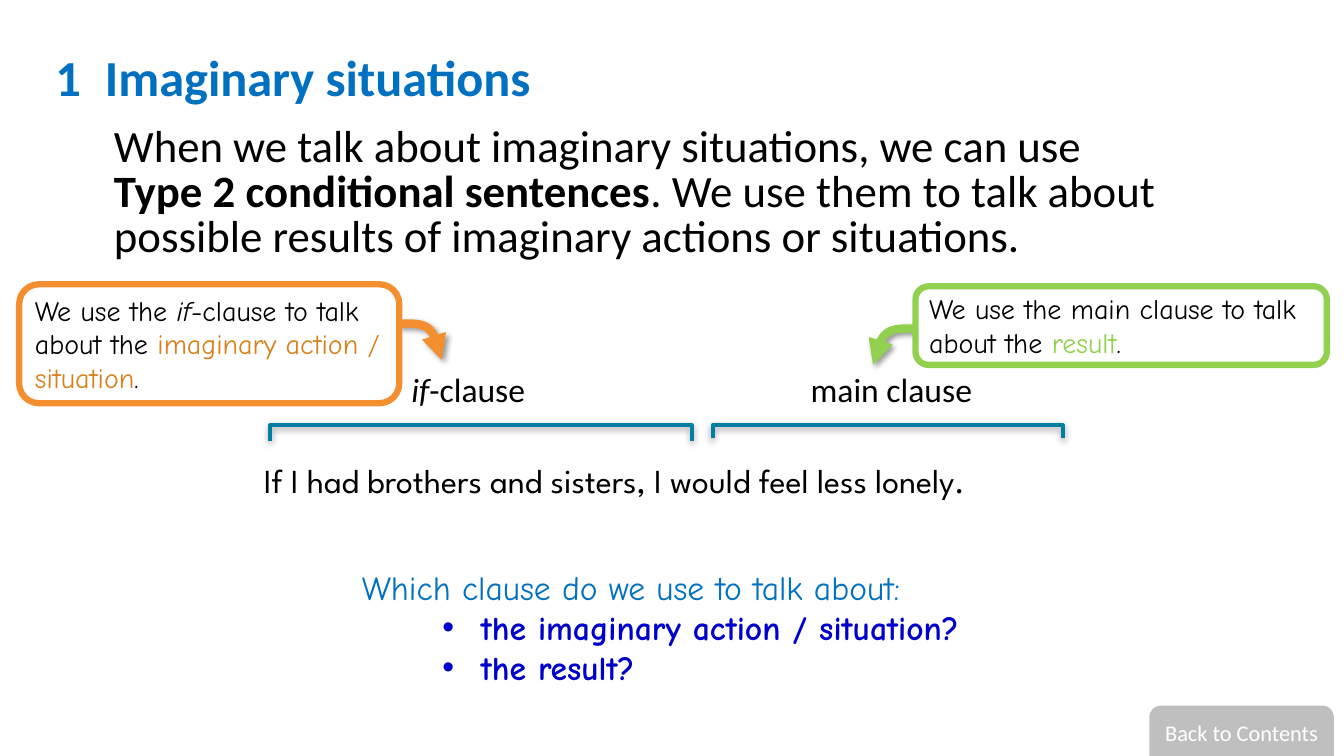
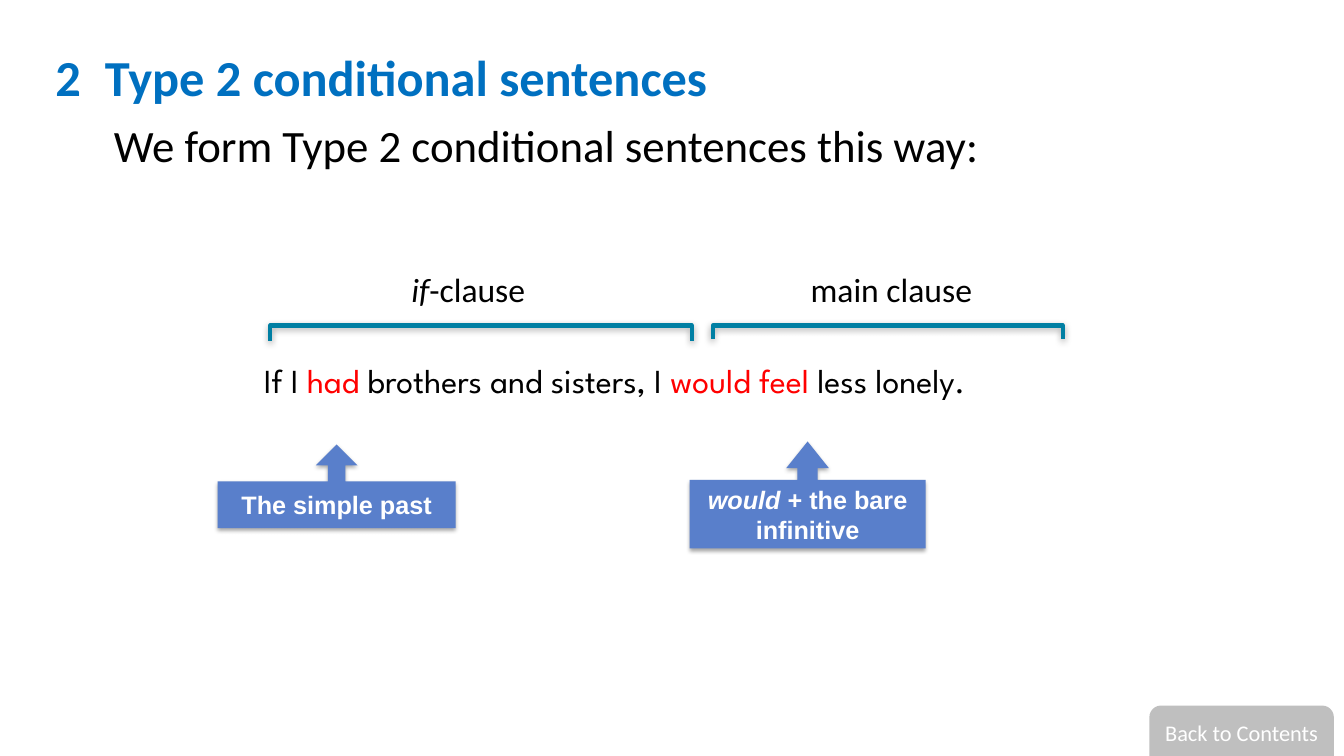
from lxml.etree import SubElement
from pptx import Presentation
from pptx.dml.color import RGBColor
from pptx.enum.shapes import MSO_SHAPE
from pptx.enum.text import MSO_ANCHOR, MSO_AUTO_SIZE, PP_ALIGN
from pptx.oxml.ns import qn
from pptx.util import Inches, Pt

BLACK = RGBColor(0x00, 0x00, 0x00)
WHITE = RGBColor(0xFF, 0xFF, 0xFF)
TITLE_BLUE = RGBColor(0x00, 0x70, 0xC0)
DEEP_BLUE = RGBColor(0x00, 0x00, 0xCC)
BOX_BLUE = RGBColor(0x59, 0x7F, 0xCB)
TEAL = RGBColor(0x00, 0x7F, 0xA3)
GREEN = RGBColor(0x92, 0xD0, 0x50)
ORANGE = RGBColor(0xF3, 0x8F, 0x2F)
DARK_ORANGE = RGBColor(0xD7, 0x80, 0x1C)
RED = RGBColor(0xFF, 0x00, 0x00)
GRAY = RGBColor(0xBF, 0xBF, 0xBF)

MAIN_FONT = "Calibri"
NOTE_FONT = "Comic Neue"
EXAMPLE_FONT = "League Spartan"
LABEL_FONT = "Arial"

CURVES = (
    ((0, 0), (0.11, 0), (0.23, -0.01), (0.3, 0.05)),
    ((0.3, 0.05), (0.37, 0.11), (0.4, 0.23), (0.43, 0.36)),
)
CURVE_STEPS = 12


def write_runs(paragraph, runs, font_name, size, color=BLACK, bold=False):
    for text, style in runs:
        if text == "\n":
            paragraph.add_line_break()
            continue
        run = paragraph.add_run()
        run.text = text
        run.font.name = font_name
        run.font.size = Pt(size)
        run.font.bold = style.get("bold", bold)
        run.font.italic = style.get("italic", False)
        run.font.color.rgb = style.get("color", color)


def set_indent(paragraph, left, first, bullet=None):
    properties = paragraph._p.get_or_add_pPr()
    properties.set("marL", str(Inches(left)))
    properties.set("indent", str(Inches(first)))
    if bullet:
        SubElement(properties, qn("a:buFont"), typeface="Arial")
        SubElement(properties, qn("a:buChar"), char=bullet)
    else:
        SubElement(properties, qn("a:buNone"))


def set_insets(text_frame, horizontal, vertical):
    text_frame.margin_left = text_frame.margin_right = Inches(horizontal)
    text_frame.margin_top = text_frame.margin_bottom = Inches(vertical)


def set_shadow(shape, alpha, blur, distance, direction):
    shape.shadow.inherit = False
    effects = shape._element.spPr.find(qn("a:effectLst"))
    shadow = SubElement(effects, qn("a:outerShdw"), blurRad=str(Pt(blur)),
                        dist=str(Pt(distance)), dir=str(direction * 60000),
                        rotWithShape="0")
    color = SubElement(shadow, qn("a:srgbClr"), val=str(BLACK))
    SubElement(color, qn("a:alpha"), val=str(alpha * 1000))


def place(shape, left, top, width, height):
    shape.left, shape.top = Inches(left), Inches(top)
    shape.width, shape.height = Inches(width), Inches(height)


def add_box(slide, kind, left, top, width, height, fill=None, line=None, line_width=1):
    shape = slide.shapes.add_shape(kind, Inches(left), Inches(top),
                                   Inches(width), Inches(height))
    shape.shadow.inherit = False
    if fill is None:
        shape.fill.background()
    else:
        shape.fill.solid()
        shape.fill.fore_color.rgb = fill
    if line is None:
        shape.line.fill.background()
    else:
        shape.line.color.rgb = line
        shape.line.width = Pt(line_width)
    shape.text_frame.word_wrap = True
    shape.text_frame.vertical_anchor = MSO_ANCHOR.MIDDLE
    return shape


def add_text(slide, left, top, width, height, runs, font_name, size, inset=True):
    shape = slide.shapes.add_textbox(Inches(left), Inches(top),
                                     Inches(width), Inches(height))
    text_frame = shape.text_frame
    text_frame.word_wrap = True
    if not inset:
        set_insets(text_frame, 0, 0)
    write_runs(text_frame.paragraphs[0], runs, font_name, size)
    return text_frame


def fill_placeholder(shape, box, runs, size, spacing, indent, color=BLACK, bold=False):
    place(shape, *box)
    text_frame = shape.text_frame
    text_frame.word_wrap = True
    text_frame.auto_size = MSO_AUTO_SIZE.NONE
    text_frame.vertical_anchor = MSO_ANCHOR.TOP
    paragraph = text_frame.paragraphs[0]
    set_indent(paragraph, indent, -indent)
    paragraph.alignment = PP_ALIGN.LEFT
    paragraph.line_spacing = Pt(spacing)
    paragraph.space_before = Pt(0)
    write_runs(paragraph, runs, MAIN_FONT, size, color, bold)


def add_lesson_slide(presentation, title, introduction):
    slide = presentation.slides.add_slide(presentation.slide_layouts[1])
    heading, body = slide.placeholders
    fill_placeholder(heading, (0.55, 0.5, 11.77, 0.63), [(title, {})],
                     36, 40, 0.49, TITLE_BLUE, True)
    set_insets(heading.text_frame, 0, 0)
    fill_placeholder(body, (1.03, 1.21, 11.21, 1.45), introduction, 32, 32, 0)

    tab = add_box(slide, MSO_SHAPE.ROUND_2_SAME_RECTANGLE, 11.4, 7, 1.83, 0.5, GRAY)
    tab.adjustments[0] = 0.23
    set_insets(tab.text_frame, 0.1, 0)
    paragraph = tab.text_frame.paragraphs[0]
    paragraph.alignment = PP_ALIGN.CENTER
    write_runs(paragraph, [("Back to Contents", {})], MAIN_FONT, 16, WHITE)
    return slide


def add_bracket(slide, left, top, width, depth):
    bracket = add_box(slide, MSO_SHAPE.LEFT_BRACKET, left + (width - depth) / 2,
                      top + (depth - width) / 2, depth, width, line=TEAL, line_width=3)
    bracket.rotation = 90
    bracket.adjustments[0] = 0
    set_shadow(bracket, 35, 5, 1.8, 90)


def add_clause_diagram(slide, top, sentence):
    text_frame = add_text(slide, 2.52, top + 0.81, 10.1, 0.54, sentence, EXAMPLE_FONT, 24)
    text_frame.paragraphs[0].line_spacing = Pt(32)
    add_text(slide, 4.08, top, 1.78, 0.42, [("if", {"italic": True}), ("-clause", {})],
             MAIN_FONT, 24, inset=False)
    add_text(slide, 8.04, top, 1.64, 0.42, [("main clause", {})],
             MAIN_FONT, 24, inset=False)
    add_bracket(slide, 2.68, top + 0.56, 4.18, 0.15)
    add_bracket(slide, 7.07, top + 0.56, 3.47, 0.13)


def curve_point(curve, t):
    weights = ((1 - t) ** 3, 3 * t * (1 - t) ** 2, 3 * t ** 2 * (1 - t), t ** 3)
    return tuple(sum(w * point[axis] for w, point in zip(weights, curve))
                 for axis in (0, 1))


def add_curved_arrow(slide, left, top, direction, color):
    offsets = [curve_point(curve, step / CURVE_STEPS)
               for curve in CURVES for step in range(1, CURVE_STEPS + 1)]
    points = [(Inches(left + direction * x), Inches(top + y)) for x, y in offsets]
    builder = slide.shapes.build_freeform(Inches(left), Inches(top))
    builder.add_line_segments(points, close=False)
    arrow = builder.convert_to_shape()
    arrow.fill.background()
    arrow.line.color.rgb = color
    arrow.line.width = Pt(6)
    SubElement(arrow.line._get_or_add_ln(), qn("a:tailEnd"), type="triangle")
    set_shadow(arrow, 40, 4, 3, 45)


def add_note(slide, left, top, width, height, color, runs):
    note = add_box(slide, MSO_SHAPE.ROUNDED_RECTANGLE, left, top, width, height,
                   WHITE, color, 4.5)
    paragraph = note.text_frame.paragraphs[0]
    paragraph.alignment = PP_ALIGN.LEFT
    write_runs(paragraph, runs, NOTE_FONT, 20)


def add_question(slide, question, choices):
    text_frame = add_text(slide, 3.49, 5.57, 7.11, 1.31, [], NOTE_FONT, 24)
    write_runs(text_frame.paragraphs[0], [(question, {})], NOTE_FONT, 24, TITLE_BLUE)
    for choice in choices:
        paragraph = text_frame.add_paragraph()
        set_indent(paragraph, 1.18, -0.38, "•")
        write_runs(paragraph, [(choice, {})], NOTE_FONT, 24, DEEP_BLUE, True)


def add_form_callout(slide, left, top, width, height, adjustments, runs):
    callout = add_box(slide, MSO_SHAPE.UP_ARROW_CALLOUT, left, top, width, height, BOX_BLUE)
    for index, value in enumerate(adjustments):
        callout.adjustments[index] = value
    set_shadow(callout, 35, 3.1, 1.8, 90)
    set_insets(callout.text_frame, 0.1, 0)
    paragraph = callout.text_frame.paragraphs[0]
    paragraph.alignment = PP_ALIGN.CENTER
    write_runs(paragraph, runs, LABEL_FONT, 18, WHITE, True)


def build_situations_slide(presentation):
    slide = add_lesson_slide(presentation, "1\tImaginary situations", [
        ("When we talk about imaginary situations, we can use ", {}),
        ("\n", {}),
        ("Type 2 conditional sentences", {"bold": True}),
        (". We use them to talk about possible results of imaginary actions or situations.", {}),
    ])
    add_clause_diagram(slide, 3.66, [
        ("If I had brothers and sisters, I would feel less lonely.", {})])
    add_curved_arrow(slide, 9.09, 3.26, -1, GREEN)
    add_note(slide, 9.08, 2.84, 4.08, 0.78, GREEN, [
        ("We use the main clause to talk about the ", {}),
        ("result", {"color": GREEN}),
        (".", {}),
    ])
    add_question(slide, "Which clause do we use to talk about:",
                 ["the imaginary action / situation?", "the result?"])
    add_curved_arrow(slide, 3.95, 3.21, 1, ORANGE)
    add_note(slide, 0.19, 2.82, 3.77, 1.18, ORANGE, [
        ("We use the ", {}),
        ("if", {"italic": True}),
        ("-clause to talk about the ", {}),
        ("imaginary action / situation", {"color": DARK_ORANGE}),
        (".", {}),
    ])


def build_form_slide(presentation):
    slide = add_lesson_slide(presentation, "2\tType 2 conditional sentences", [
        ("We form Type 2 conditional sentences this way:", {})])
    add_clause_diagram(slide, 2.67, [
        ("If I ", {}),
        ("had", {"color": RED}),
        (" brothers and sisters, I ", {}),
        ("would feel ", {"color": RED}),
        ("less lonely.", {}),
    ])
    add_form_callout(slide, 2.16, 4.41, 2.36, 0.83, (0.21, 0.25, 0.25, 0.56),
                     [("The simple past", {})])
    add_form_callout(slide, 6.84, 4.38, 2.34, 1.06, (0.19, 0.2, 0.25, 0.64),
                     [("would ", {"italic": True}), ("+ the bare infinitive", {})])


def main():
    presentation = Presentation()
    presentation.slide_width = Inches(13.33)
    presentation.slide_height = Inches(7.5)
    build_situations_slide(presentation)
    build_form_slide(presentation)
    presentation.save("out.pptx")


if __name__ == "__main__":
    main()
